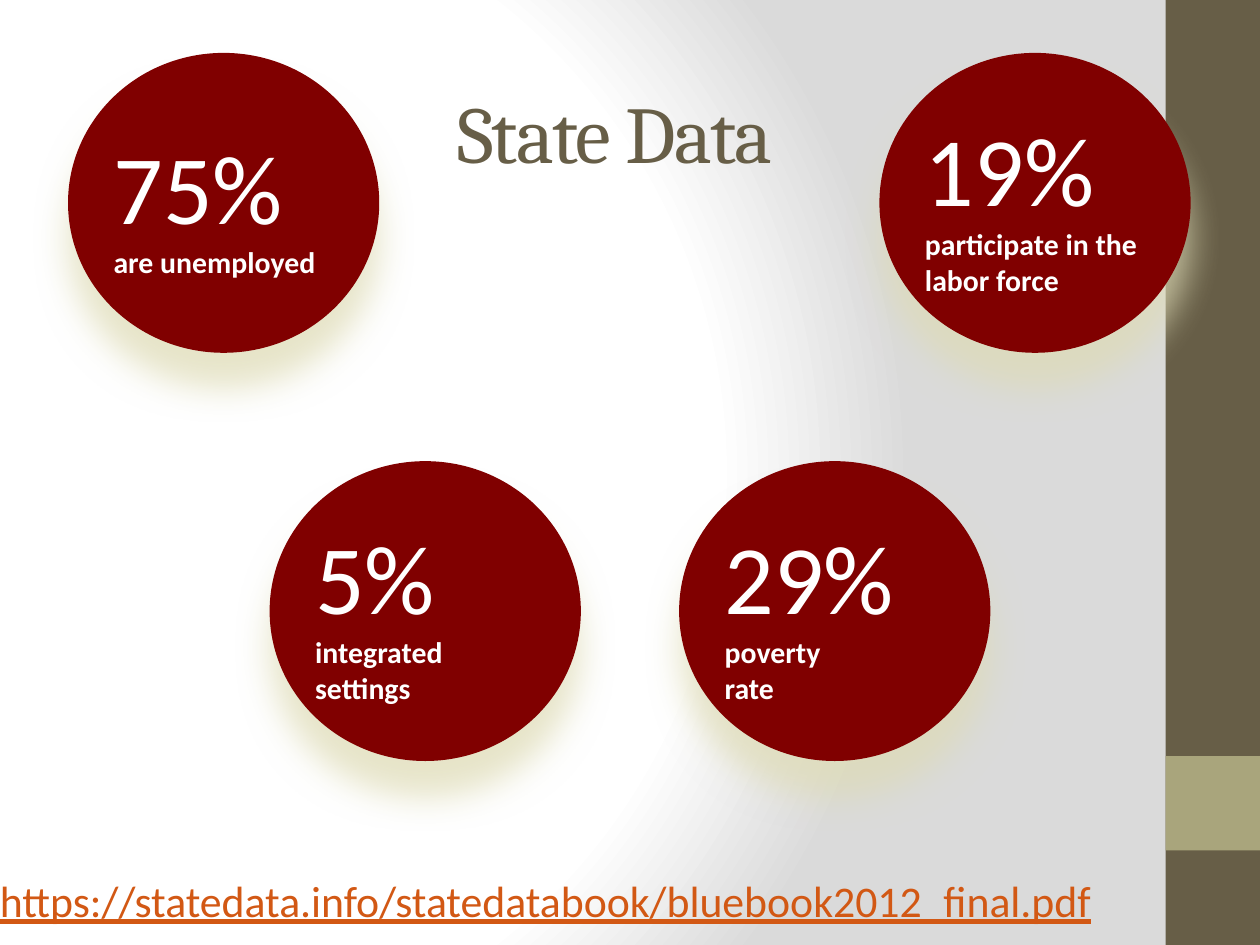
import lxml.etree
import pptx
import pptx.dml.color
import pptx.enum.shapes
import pptx.enum.text
import pptx.oxml
import pptx.oxml.ns
import pptx.util

WIDTH, HEIGHT = 10, 7.5
DARK, OLIVE, MAROON, WHITE, ORANGE = "675E47", "A9A57C", "800000", "FFFFFF", "D25814"
NAMESPACE = pptx.oxml.ns.nsdecls("a")
CIRCLE_SIZE = (2.47, 2.38)
TOP_ROW, BOTTOM_ROW = 0.42, 3.66
STATISTICS = [
    (0.54, TOP_ROW, "75%", ["are unemployed"]),
    (2.14, BOTTOM_ROW, "5%", ["integrated", "settings"]),
    (6.98, TOP_ROW, "19%", ["participate in the labor force"]),
    (5.39, BOTTOM_ROW, "29%", ["poverty", "rate"]),
]


def color(value):
    """Turn a hex string into a colour."""
    return pptx.dml.color.RGBColor.from_string(value)


def inches(box):
    """Turn left, top, width and height into lengths."""
    return [pptx.util.Inches(value) for value in box]


def add_shape(slide, kind, box, fill):
    """Add a plain filled shape without outline or shadow."""
    shape = slide.shapes.add_shape(kind, *inches(box))
    shape.shadow.inherit = False
    shape.fill.solid()
    shape.fill.fore_color.rgb = color(fill)
    shape.line.fill.background()
    return shape


def write_lines(shape, lines, inset=0):
    """Write one left-aligned run per paragraph and return the runs."""
    frame = shape.text_frame
    frame.word_wrap = True
    frame.vertical_anchor = pptx.enum.text.MSO_ANCHOR.MIDDLE
    frame.margin_left = frame.margin_right = pptx.util.Inches(inset)
    frame.margin_top = frame.margin_bottom = pptx.util.Inches(inset / 2)
    runs = []
    for index, (text, size, name, fill, bold) in enumerate(lines):
        paragraph = frame.add_paragraph() if index else frame.paragraphs[0]
        paragraph.alignment = pptx.enum.text.PP_ALIGN.LEFT
        run = paragraph.add_run()
        run.text = text
        run.font.size = pptx.util.Pt(size)
        run.font.name = name
        run.font.bold = bold
        run.font.color.rgb = color(fill)
        runs.append(run)
    return runs


def paint_background(slide):
    """Fill the background with a circular white to grey gradient."""
    slide.background.fill.gradient()
    gradient = next(slide.background._cSld.iter(pptx.oxml.ns.qn("a:gradFill")))
    stops = "".join(
        f'<a:gs pos="{position * 1000}"><a:srgbClr val="{value}"/></a:gs>'
        for position, value in [(0, WHITE), (75, WHITE), (100, "DADADA")]
    )
    gradient.getparent().replace(gradient, pptx.oxml.parse_xml(
        f'<a:gradFill {NAMESPACE} rotWithShape="1"><a:gsLst>{stops}</a:gsLst>'
        '<a:path path="circle"><a:fillToRect l="20000" t="50000" r="100000" b="50000"/>'
        "</a:path></a:gradFill>"
    ))


def add_side_band(slide, box):
    """Draw the dark band with its square accent."""
    left, top, width, height = box
    rectangle = pptx.enum.shapes.MSO_SHAPE.RECTANGLE
    add_shape(slide, rectangle, box, DARK)
    add_shape(slide, rectangle, (left, top + height * 0.8, width, width), OLIVE)


def add_source_address(slide, box):
    """Write the underlined web address."""
    shape = slide.shapes.add_textbox(*inches(box))
    address = "https://statedata.info/statedatabook/bluebook2012_final.pdf"
    run, = write_lines(shape, [(address, 25, "Calibri", ORANGE, False)])
    run.font.underline = True


def add_statistic(slide, box, figure, labels):
    """Draw a glowing circle holding a large figure and its label."""
    circle = add_shape(slide, pptx.enum.shapes.MSO_SHAPE.OVAL, box, MAROON)
    effects = circle._element.spPr.find(pptx.oxml.ns.qn("a:effectLst"))
    effects.append(pptx.oxml.parse_xml(
        f'<a:outerShdw {NAMESPACE} blurRad="{pptx.util.Pt(20)}" dist="{pptx.util.Pt(20)}" '
        'dir="5400000" algn="ctr" rotWithShape="0"><a:srgbClr val="DFDCB7">'
        '<a:alpha val="75000"/></a:srgbClr></a:outerShdw>'
    ))
    lines = [(figure, 56, "Calibri", WHITE, False)]
    lines += [(label, 17, "Calibri", WHITE, True) for label in labels]
    write_lines(circle, lines)


def add_title(slide, box):
    """Write the slide title with tightened letters."""
    shape = slide.shapes.add_textbox(*inches(box))
    run, = write_lines(shape, [("State Data", 46, "Cambria", DARK, False)], inset=0.1)
    run.font._element.set("spc", "-100")


def main():
    """Build and save the slide."""
    presentation = pptx.Presentation()
    presentation.slide_width = pptx.util.Inches(WIDTH)
    presentation.slide_height = pptx.util.Inches(HEIGHT)
    slide = presentation.slides.add_slide(presentation.slide_layouts[6])
    paint_background(slide)
    add_side_band(slide, (WIDTH * 0.925, 0, WIDTH * 0.075, HEIGHT))
    add_source_address(slide, (0, HEIGHT * 0.92, WIDTH, 0.48))
    for left, top, figure, labels in STATISTICS:
        add_statistic(slide, (left, top, *CIRCLE_SIZE), figure, labels)
    add_title(slide, (3.53, TOP_ROW, 8.33, 1.25))
    presentation.save("out.pptx")


if __name__ == "__main__":
    main()
